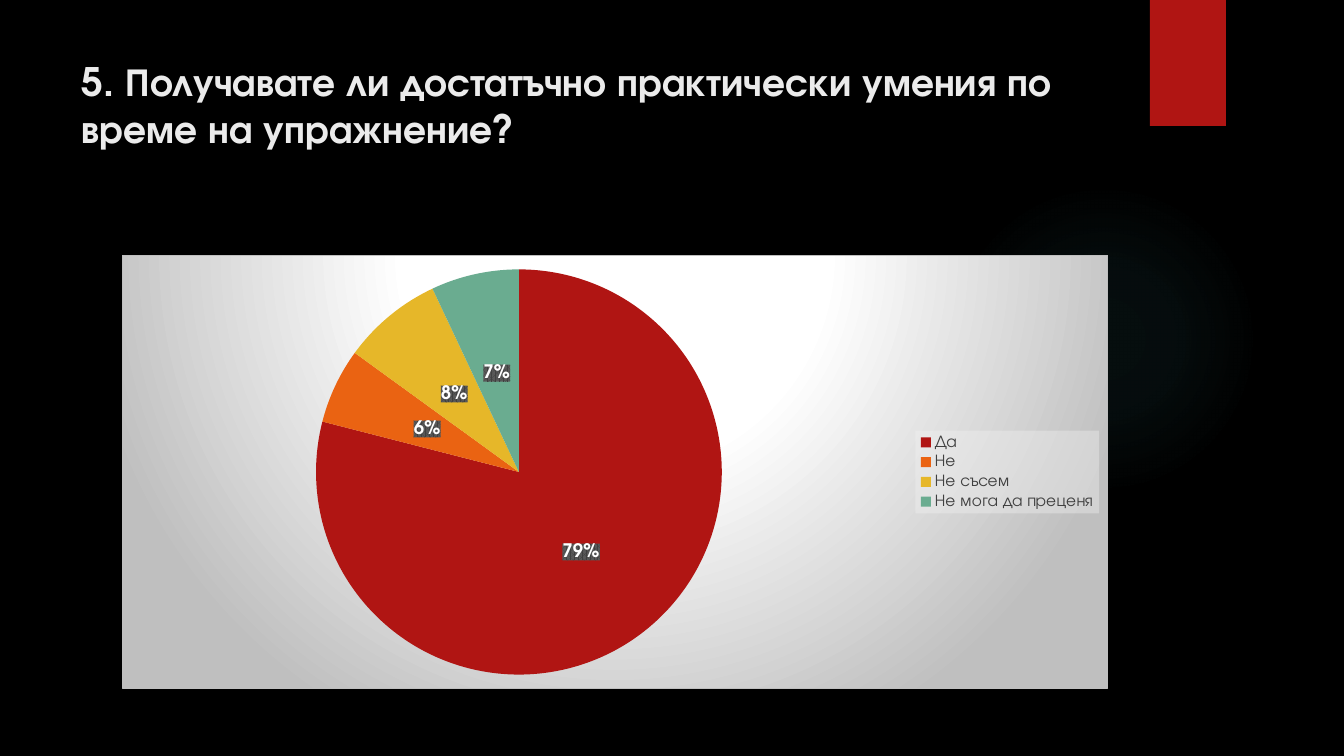
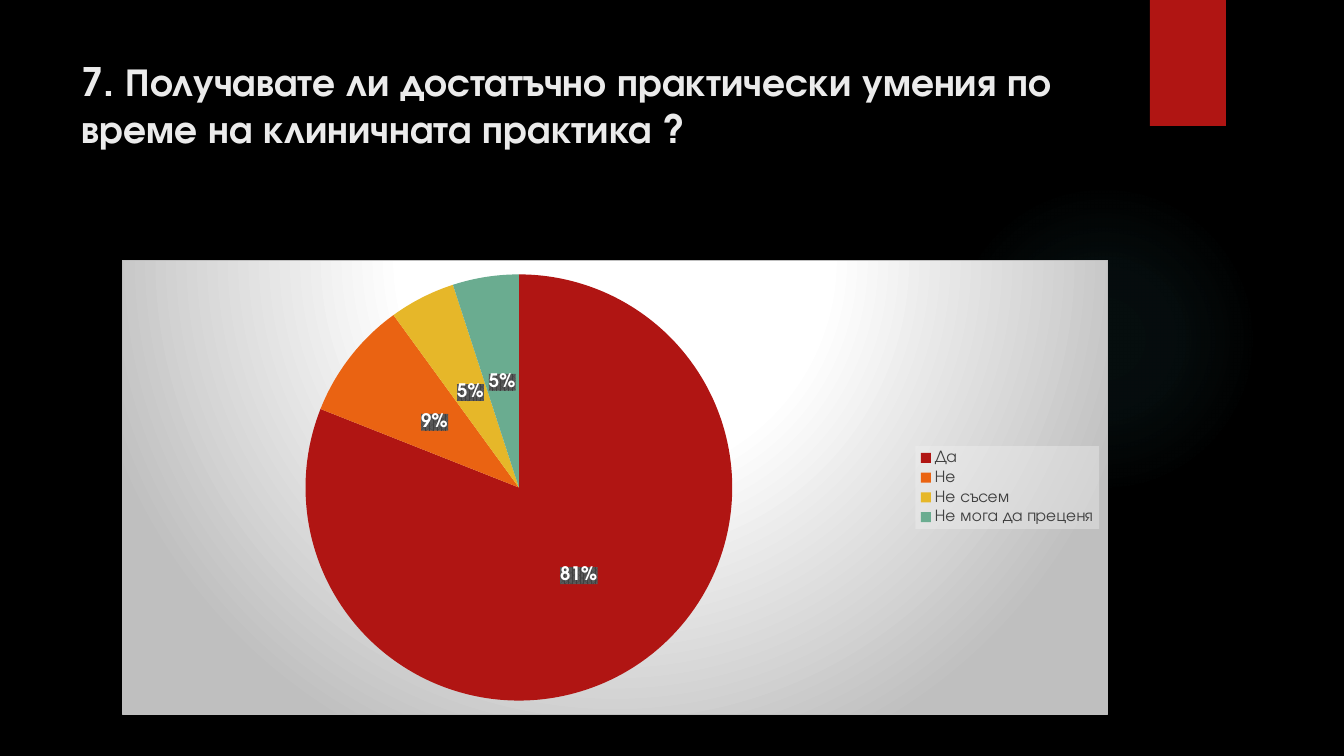
from lxml.etree import SubElement
from pptx import Presentation
from pptx.chart.data import CategoryChartData
from pptx.dml.color import RGBColor
from pptx.enum.chart import XL_CHART_TYPE, XL_LABEL_POSITION, XL_LEGEND_POSITION
from pptx.enum.shapes import MSO_SHAPE
from pptx.enum.text import MSO_ANCHOR, PP_ALIGN
from pptx.oxml import parse_xml
from pptx.oxml.ns import nsdecls, qn
from pptx.util import Emu, Pt

BLACK = RGBColor(0x00, 0x00, 0x00)
WHITE = RGBColor(0xFF, 0xFF, 0xFF)
TITLE = RGBColor(0xEB, 0xEB, 0xEB)
GLOW = RGBColor(0x50, 0xB9, 0xC1)
RED = RGBColor(0xB0, 0x15, 0x13)
ORANGE = RGBColor(0xEA, 0x63, 0x12)
YELLOW = RGBColor(0xE6, 0xB7, 0x29)
GREEN = RGBColor(0x6A, 0xAC, 0x90)
SILVER = RGBColor(0xBF, 0xBF, 0xBF)
PALE = RGBColor(0xF2, 0xF2, 0xF2)
DARK = RGBColor(0x40, 0x40, 0x40)
GRAY = RGBColor(0x59, 0x59, 0x59)

FONT = "TeX Gyre Adventor"
EMU_PER_PX = 914400 / 100.8
SLICES = (RED, ORANGE, YELLOW, GREEN)
ANSWERS = ("Да", "Не", "Не съсем", "Не мога да преценя")
QUESTIONS = (
    ("5. Получавате ли достатъчно практически умения по време на упражнение?",
     (79, 6, 8, 7), 255, 434),
    ("7. Получавате ли достатъчно практически умения по време на клиничната практика ?",
     (81, 9, 5, 5), 260, 455),
)


def px(n):
    return Emu(round(n * EMU_PER_PX))


def color_xml(color, alpha=100):
    return f'<a:srgbClr val="{color}"><a:alpha val="{alpha * 1000}"/></a:srgbClr>'


def gradient_xml(stops, top=50, bottom=50):
    gs = "".join(f'<a:gs pos="{pos * 1000}">{color_xml(color, alpha)}</a:gs>'
                 for pos, color, alpha in stops)
    return (f'<a:gradFill {nsdecls("a")} rotWithShape="1"><a:gsLst>{gs}</a:gsLst>'
            f'<a:path path="circle"><a:fillToRect l="50000" t="{top * 1000}" '
            f'r="50000" b="{bottom * 1000}"/></a:path></a:gradFill>')


def chart_format(content):
    return parse_xml(f'<c:spPr {nsdecls("c", "a")}>{content}</c:spPr>')


class Deck:
    def __init__(self):
        self.prs = Presentation()
        self.prs.slide_width, self.prs.slide_height = px(1344), px(756)

    def add_slide(self):
        self.s = self.prs.slides.add_slide(self.prs.slide_layouts[6])
        fill = self.s.background.fill
        fill.solid()
        fill.fore_color.rgb = BLACK
        self.glow(949, 184, 310)
        self.tab(1150, 0, 76, 126)

    def shape(self, kind, x, y, w, h):
        sp = self.s.shapes.add_shape(kind, px(x), px(y), px(w), px(h))
        sp.shadow.inherit = False
        sp.line.fill.background()
        return sp

    def glow(self, x, y, size):
        sp = self.shape(MSO_SHAPE.OVAL, x, y, size, size)
        sp.fill.background()
        no_fill = sp.element.spPr.find(qn("a:noFill"))
        stops = ((0, GLOW, 7), (36, GLOW, 6), (69, GLOW, 0))
        sp.element.spPr.replace(no_fill, parse_xml(gradient_xml(stops)))

    def tab(self, x, y, w, h):
        sp = self.shape(MSO_SHAPE.RECTANGLE, x, y, w, h)
        sp.fill.solid()
        sp.fill.fore_color.rgb = RED
        effects = sp.element.spPr.find(qn("a:effectLst"))
        shadow = SubElement(effects, qn("a:outerShdw"), blurRad=str(Pt(3)),
                            dist=str(Pt(2)), dir="5400000", rotWithShape="0")
        color = SubElement(shadow, qn("a:srgbClr"), val=str(BLACK))
        SubElement(color, qn("a:alpha"), val="45000")

    def title(self, text):
        sp = self.s.shapes.add_textbox(px(72), px(50), px(1037), px(154))
        tf = sp.text_frame
        tf.word_wrap = True
        tf.vertical_anchor = MSO_ANCHOR.TOP
        tf.margin_top = px(7)
        p = tf.paragraphs[0]
        p.text = text
        p.alignment = PP_ALIGN.LEFT
        self.style(p.font, 28, TITLE, True)

    def style(self, font, size, color, bold=False):
        font.name = FONT
        font.size = Pt(size)
        font.bold = bold
        font.color.rgb = color

    def pie(self, values, x, y, w, h):
        data = CategoryChartData()
        data.categories = ANSWERS
        data.add_series("Series 1", values)
        chart = self.s.shapes.add_chart(
            XL_CHART_TYPE.PIE, px(x), px(y), px(w), px(h), data).chart
        chart.has_title = False
        self.style(chart.font, 10, WHITE)

        plot = chart.plots[0]
        plot.vary_by_categories = True
        for i, color in enumerate(SLICES):
            fill = plot.series[0].points[i].format.fill
            fill.solid()
            fill.fore_color.rgb = color

        plot.has_data_labels = True
        labels = plot.data_labels
        labels.show_percentage = True
        labels.show_value = False
        labels.number_format = "0%"
        labels.number_format_is_linked = False
        labels.position = XL_LABEL_POSITION.CENTER
        self.style(labels.font, 13.3, WHITE, True)

        chart.has_legend = True
        legend = chart.legend
        legend.position = XL_LEGEND_POSITION.RIGHT
        legend.include_in_layout = False
        self.style(legend.font, 12, DARK)

        stops = ((0, WHITE, 100), (39, WHITE, 100), (100, SILVER, 100))
        formats = {
            "c:chart": gradient_xml(stops, -80, 180)
            + f'<a:ln w="9525"><a:solidFill>{color_xml(SILVER)}</a:solidFill></a:ln>',
            ".//c:dLbls/c:numFmt": '<a:pattFill prst="pct75">'
            f'<a:fgClr>{color_xml(DARK)}</a:fgClr>'
            f'<a:bgClr>{color_xml(GRAY)}</a:bgClr></a:pattFill>',
            ".//c:legend/c:overlay": f'<a:solidFill>{color_xml(PALE, 39)}</a:solidFill>',
        }
        for place, content in formats.items():
            for element in chart._chartSpace.xpath(place):
                element.addnext(chart_format(content))


def main():
    deck = Deck()
    for question, values, top, height in QUESTIONS:
        deck.add_slide()
        deck.title(question)
        deck.pie(values, 122, top, 986, height)
    deck.prs.save("out.pptx")


if __name__ == "__main__":
    main()
